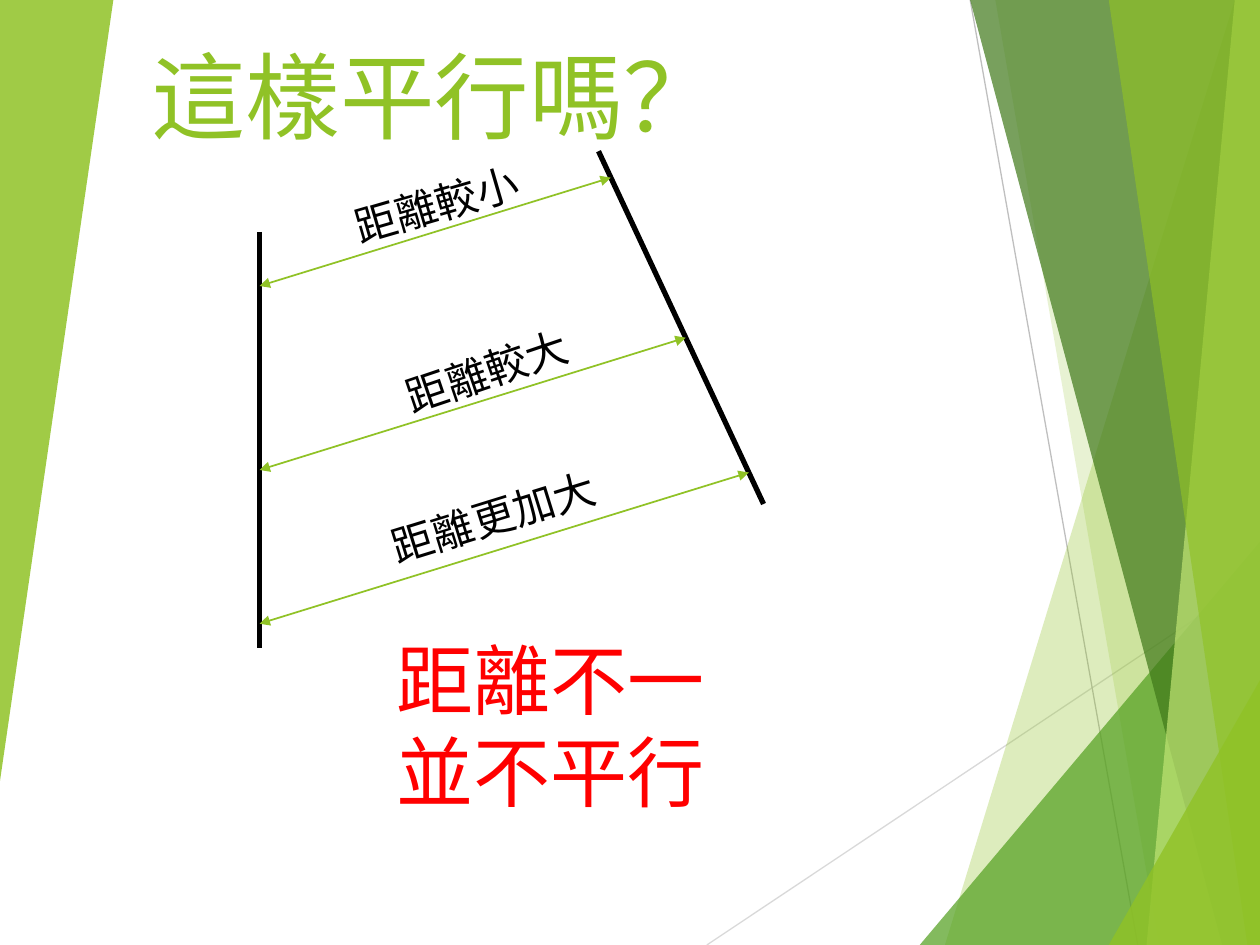
import dataclasses

import lxml.etree
import pptx
import pptx.dml.color
import pptx.enum.shapes
import pptx.enum.text
import pptx.oxml.ns
import pptx.util

COLUMNS, ROWS = 100, 75
CELL = pptx.util.Inches(0.1)
GREEN, BLACK, RED = "90C226", "000000", "FF0000"
ALIGN = pptx.enum.text.PP_ALIGN
ANCHOR = pptx.enum.text.MSO_ANCHOR

Point = tuple[float, float]


@dataclasses.dataclass(frozen=True)
class Facet:
    """A translucent polygon of the background, in grid cells."""
    points: tuple[Point, ...]
    color: str
    opacity: int


@dataclasses.dataclass(frozen=True)
class Stroke:
    """A straight line between two grid points."""
    start: Point
    end: Point
    color: str
    width: float
    arrows: bool = False


@dataclasses.dataclass(frozen=True)
class Label:
    """A text box on the grid, with one paragraph per line."""
    lines: tuple[str, ...]
    box: tuple[float, float, float, float]
    size: int
    color: str = BLACK
    rotation: float = 0
    font: str = "Times New Roman"
    align: ALIGN = ALIGN.LEFT
    anchor: ANCHOR = ANCHOR.TOP


BACKGROUND_STROKES = (
    Stroke((56.1, ROWS), (COLUMNS, 45.7), "D9D9D9", 0.75),
    Stroke((77, 0), (90.3, ROWS), "BFBFBF", 0.75),
)

FACETS = (
    Facet(((97.5, 0), (75.4, ROWS), (COLUMNS, ROWS), (COLUMNS, 0)), GREEN, 30),
    Facet(((78.8, 0), (91.9, ROWS), (COLUMNS, ROWS), (COLUMNS, 0)), GREEN, 20),
    Facet(((72.6, ROWS), (COLUMNS, 42.9), (COLUMNS, ROWS)), "54A021", 72),
    Facet(((76.7, 0), (97, ROWS), (COLUMNS, ROWS), (COLUMNS, 0)), "3F7819", 70),
    Facet(((98.1, 0), (90.7, ROWS), (COLUMNS, ROWS), (COLUMNS, 0)), "C0E474", 70),
    Facet(((88.3, 0), (98.6, ROWS), (COLUMNS, ROWS), (99.8, 0)), GREEN, 65),
    Facet(((88.1, ROWS), (COLUMNS, 53.5), (COLUMNS, ROWS)), GREEN, 80),
    Facet(((0, 0), (9.4, 0), (0, 62)), GREEN, 85),
)

UPRIGHT = Stroke((20.6, 18.4), (20.6, 51.4), BLACK, 3)
SLANTED = Stroke((47.5, 12), (60.6, 40), BLACK, 3)
GAP_ROWS = ((22.7, 14.1), (37.3, 26.8), (49.5, 37.5))

LABELS = (
    Label(("這樣平行嗎？",), (-11.4, -1.9, 69.4, 14.4), 54, GREEN,
          font="Karla", align=ALIGN.RIGHT, anchor=ANCHOR.BOTTOM),
    Label(("距離較小",), (26.9, 13.3, 18.1, 5), 24, rotation=343.8),
    Label(("距離較大",), (30.9, 26.5, 18.1, 5), 24, rotation=341.3),
    Label(("距離更加大",), (29.8, 38.3, 20.1, 5), 24, rotation=342.8),
    Label(("距離不一", "並不平行"), (30.5, 49.7, 27.6, 15.8), 44, RED),
)


def cells(count: float) -> int:
    """Turn a number of grid cells into a length."""
    return round(count * CELL)


def rgb(color: str) -> pptx.dml.color.RGBColor:
    """Turn a hex string into a colour."""
    return pptx.dml.color.RGBColor.from_string(color)


def column_on(stroke: Stroke, row: float) -> float:
    """Find the column where a stroke crosses a row."""
    (left, top), (right, bottom) = stroke.start, stroke.end
    return left + (right - left) * (row - top) / (bottom - top)


def draw_facet(slide, facet: Facet) -> None:
    """Draw a polygon with a translucent fill and no outline."""
    builder = slide.shapes.build_freeform(*facet.points[0], scale=CELL)
    builder.add_line_segments(facet.points[1:], close=True)
    shape = builder.convert_to_shape()
    shape.shadow.inherit = False
    shape.fill.solid()
    shape.fill.fore_color.rgb = rgb(facet.color)
    shape.line.fill.background()
    color = shape._element.spPr.find(".//" + pptx.oxml.ns.qn("a:srgbClr"))
    lxml.etree.SubElement(color, pptx.oxml.ns.qn("a:alpha"), val=str(facet.opacity * 1000))


def draw_stroke(slide, stroke: Stroke) -> None:
    """Draw a straight connector, with arrowheads at both ends if asked."""
    connector = slide.shapes.add_connector(
        pptx.enum.shapes.MSO_CONNECTOR.STRAIGHT,
        *map(cells, stroke.start + stroke.end))
    connector.line.color.rgb = rgb(stroke.color)
    connector.line.width = pptx.util.Pt(stroke.width)
    if stroke.arrows:
        outline = connector.line._get_or_add_ln()
        for end in ("a:headEnd", "a:tailEnd"):
            lxml.etree.SubElement(outline, pptx.oxml.ns.qn(end), type="triangle")
    lxml.etree.SubElement(connector._element.spPr, pptx.oxml.ns.qn("a:effectLst"))


def draw_label(slide, label: Label) -> None:
    """Draw a text box, turned by its rotation."""
    shape = slide.shapes.add_textbox(*map(cells, label.box))
    shape.rotation = label.rotation
    frame = shape.text_frame
    frame.word_wrap = True
    frame.vertical_anchor = label.anchor
    frame.text = "\n".join(label.lines)
    for paragraph in frame.paragraphs:
        paragraph.alignment = label.align
        paragraph.font.name = label.font
        paragraph.font.size = pptx.util.Pt(label.size)
        paragraph.font.color.rgb = rgb(label.color)


def main() -> None:
    """Build the slide and save it."""
    presentation = pptx.Presentation()
    presentation.slide_width = cells(COLUMNS)
    presentation.slide_height = cells(ROWS)
    slide = presentation.slides.add_slide(presentation.slide_layouts[6])
    for stroke in BACKGROUND_STROKES:
        draw_stroke(slide, stroke)
    for facet in FACETS:
        draw_facet(slide, facet)
    gaps = tuple(
        Stroke((column_on(UPRIGHT, left_row), left_row),
               (column_on(SLANTED, right_row), right_row), GREEN, 1, arrows=True)
        for left_row, right_row in GAP_ROWS)
    for stroke in (UPRIGHT, SLANTED, *gaps):
        draw_stroke(slide, stroke)
    for label in LABELS:
        draw_label(slide, label)
    presentation.save("out.pptx")


if __name__ == "__main__":
    main()
